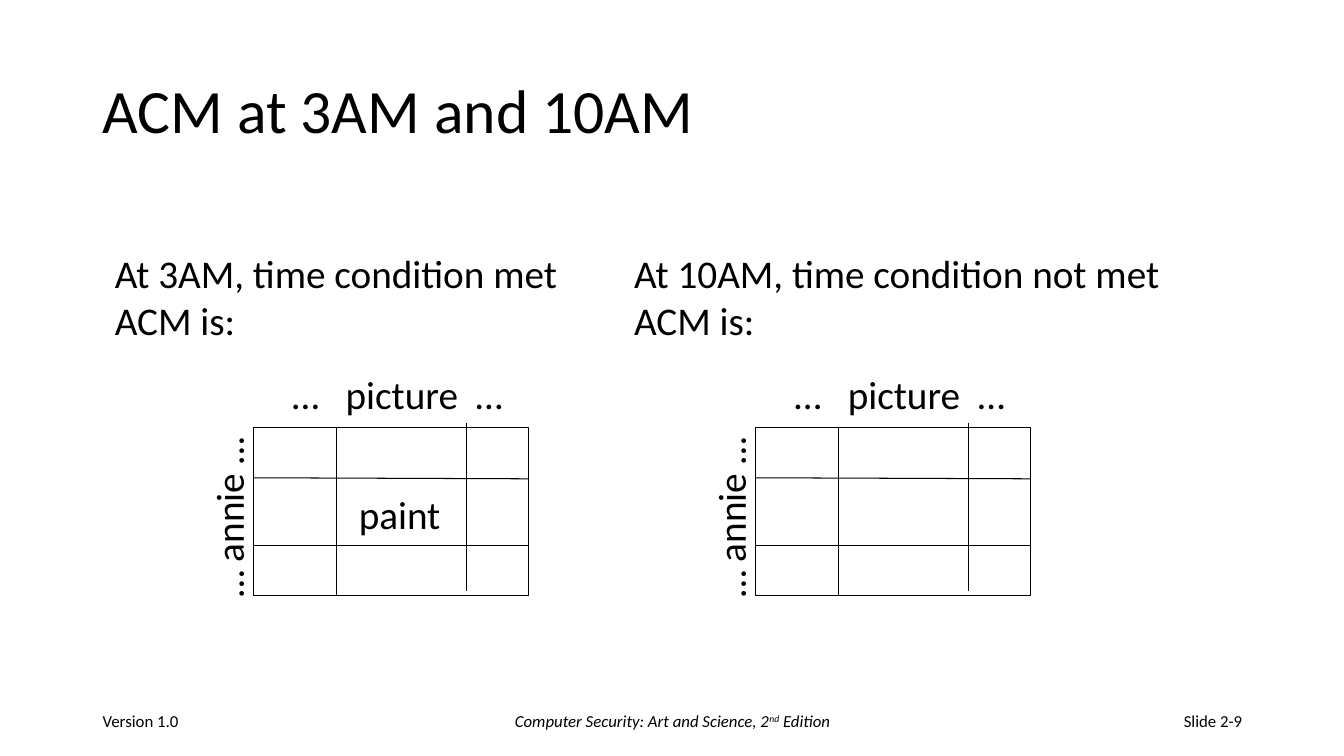
from lxml import etree
from pptx import Presentation
from pptx.dml.color import RGBColor
from pptx.enum.shapes import MSO_CONNECTOR as Connector, MSO_SHAPE as Shape
from pptx.enum.text import MSO_ANCHOR as Anchor, PP_ALIGN as Align
from pptx.oxml.ns import qn
from pptx.util import Inches, Pt

BLACK = RGBColor(0, 0, 0)
FONT = "Calibri"

TITLE = "ACM at 3AM and 10AM"
BOOK = [("Computer Security: Art and Science, 2", None), ("nd", 30), (" Edition", None)]
FOOTERS = [  # left, width, text, alignment, italic
    (0.92, 3, "Version 1.0", Align.LEFT, False),
    (4.42, 4.5, BOOK, Align.CENTER, True),
    (9.42, 3, "Slide 2-9", Align.RIGHT, False),
]
CASES = [  # caption left, matrix left, caption lines, granted right
    (1.04, 2.51, ["At 3AM, time condition met", "ACM is:"], "paint"),
    (6.19, 7.49, ["At 10AM, time condition not met", "ACM is:"], None),
]
OBJECTS = "…\tpicture\t…"
OBJECT_TABS = (0.53, 1.82)
SUBJECTS = "… annie …"

MATRIX_TOP, MATRIX_WIDTH, MATRIX_HEIGHT = 4.24, 2.73, 1.67
RULES = [  # offsets from the matrix corner: x1, y1, x2, y2
    (0.83, 0, 0.83, MATRIX_HEIGHT),
    (2.12, -0.04, 2.12, 1.62),
    (0, 0.5, MATRIX_WIDTH, 0.51),
    (0, 1.17, MATRIX_WIDTH, 1.17),
]


def add_text(shapes, lines, left, top, width, height, size=28, align=Align.LEFT,
             anchor=Anchor.TOP, italic=False, spacing=None, rotation=0,
             wrap=True, tabs=()):
    """Add a text box; each line is a string or a list of (text, baseline percent)."""
    box = shapes.add_textbox(Inches(left), Inches(top), Inches(width), Inches(height))
    box.rotation = rotation
    frame = box.text_frame
    frame.word_wrap = wrap
    frame.vertical_anchor = anchor
    if tabs:
        frame.margin_right = 0
    for number, line in enumerate(lines):
        paragraph = frame.add_paragraph() if number else frame.paragraphs[0]
        paragraph.alignment = align
        if spacing:
            paragraph.line_spacing = spacing
        if tabs:
            stops = etree.SubElement(paragraph._p.get_or_add_pPr(), qn("a:tabLst"))
            for stop in tabs:
                etree.SubElement(stops, qn("a:tab"), pos=str(Inches(stop)), algn="l")
        for words, baseline in [(line, None)] if isinstance(line, str) else line:
            run = paragraph.add_run()
            run.text = words
            run.font.name = FONT
            run.font.size = Pt(size)
            run.font.italic = italic
            run.font.color.rgb = BLACK
            if baseline:
                run.font._element.set("baseline", str(baseline * 1000))


def add_rule(shapes, x1, y1, x2, y2):
    rule = shapes.add_connector(Connector.STRAIGHT, Inches(x1), Inches(y1),
                                Inches(x2), Inches(y2))
    rule.line.color.rgb = BLACK
    rule.line.width = Pt(0.75)
    etree.SubElement(rule._element.spPr, qn("a:effectLst"))


def add_matrix(slide, left, granted):
    """Draw one access control matrix as a group."""
    shapes = slide.shapes.add_group_shape().shapes
    top = MATRIX_TOP
    border = shapes.add_shape(Shape.RECTANGLE, Inches(left), Inches(top),
                              Inches(MATRIX_WIDTH), Inches(MATRIX_HEIGHT))
    border.shadow.inherit = False
    border.fill.background()
    border.line.color.rgb = BLACK
    border.line.width = Pt(0.75)
    add_text(shapes, [OBJECTS], left + 0.29, top - 0.62, 2.32, 0.57, tabs=OBJECT_TABS)
    add_text(shapes, [SUBJECTS], left - 1.15, top + 0.6, 1.81, 0.57,
             rotation=270, wrap=False)
    for x1, y1, x2, y2 in RULES:
        add_rule(shapes, left + x1, top + y1, left + x2, top + y2)
    if granted:
        add_text(shapes, [granted], left + 0.95, top + 0.58, 1.02, 0.57, wrap=False)


def main():
    deck = Presentation()
    deck.slide_width, deck.slide_height = Inches(13.33), Inches(7.5)
    slide = deck.slides.add_slide(deck.slide_layouts[6])
    add_text(slide.shapes, [TITLE], 0.92, 0.4, 11.5, 1.45, size=44,
             anchor=Anchor.MIDDLE, spacing=0.9)
    for caption_left, matrix_left, caption, granted in CASES:
        add_text(slide.shapes, caption, caption_left, 2.42, 5.46, 1.04)
        add_matrix(slide, matrix_left, granted)
    for left, width, words, align, italic in FOOTERS:
        add_text(slide.shapes, [words], left, 6.95, width, 0.4, size=12,
                 align=align, anchor=Anchor.MIDDLE, italic=italic)
    deck.save("out.pptx")


if __name__ == "__main__":
    main()
